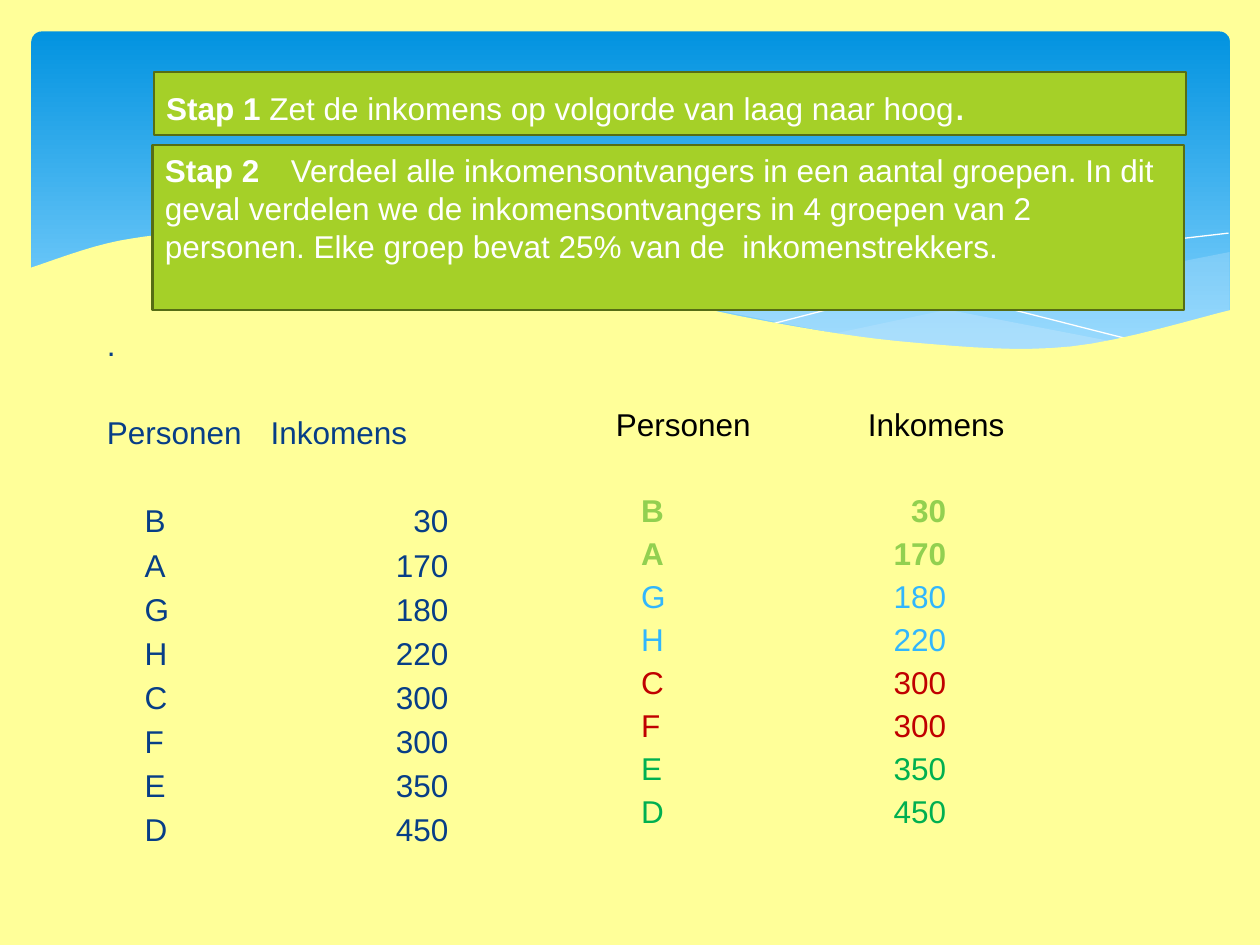
"""Build the slide on ranking incomes and dividing them into groups."""
from lxml import etree
from pptx import Presentation
from pptx.dml.color import RGBColor
from pptx.enum.shapes import MSO_SHAPE
from pptx.enum.text import MSO_ANCHOR, PP_ALIGN
from pptx.oxml.ns import qn
from pptx.util import Inches, Pt

RECT, ROUND = MSO_SHAPE.RECTANGLE, MSO_SHAPE.ROUNDED_RECTANGLE
TOP, MIDDLE = MSO_ANCHOR.TOP, MSO_ANCHOR.MIDDLE
LEFT = PP_ALIGN.LEFT
CREAM, WHITE, NAVY, PALE = "FFFF99", "FFFFFF", "073E87", "C6E7FC"
LIGHT, BLUE, RED, GREEN = "92D050", "31B6FD", "C00000", "00B050"


def color(code):
    return RGBColor.from_string(code)


def bend(knots, steps=8):
    """Return points on a smooth curve through the knots."""
    ends = [knots[0]] + knots + [knots[-1]]
    points = [knots[0]]
    for a, b, c, d in zip(ends, ends[1:], ends[2:], ends[3:]):
        for t in (n / steps for n in range(1, steps + 1)):
            points.append(tuple(
                q + t * (r - p) / 2 + t * t * (p - 2.5 * q + 2 * r - s / 2)
                + t ** 3 * (1.5 * (q - r) + (s - p) / 2)
                for p, q, r, s in zip(a, b, c, d)))
    return points


prs = Presentation()
prs.slide_width, prs.slide_height = Inches(10), Inches(7.5)
slide = prs.slides.add_slide(prs.slide_layouts[6])
shapes = slide.shapes
slide.background.fill.solid()
slide.background.fill.fore_color.rgb = color(CREAM)

sky = shapes.add_shape(ROUND, Inches(0.25), Inches(0.25), Inches(9.51), Inches(2.7))
sky.adjustments[0] = 0.03
sky.shadow.inherit = False
sky.line.fill.background()
sky.fill.gradient()
sky.fill.gradient_angle = 270
for stop, pos, code in zip(sky.fill.gradient_stops, (0, 0.9), ("0293E0", "83D3FE")):
    stop.position = pos
    stop.color.rgb = color(code)

crest = bend([(9.76, 2), (8.61, 2.23), (6.61, 2.65)])
trough = bend([(6.61, 2.65), (7.45, 2.75), (8.35, 2.77), (9.13, 2.67), (9.76, 2.47)])
swell = bend([(2.86, 1.91), (3.61, 1.85), (4.89, 1.94), (6.29, 2.22), (8.93, 2.73)])
under = bend([(8.93, 2.73), (8.07, 2.78), (6.95, 2.7), (4.49, 2.22), (2.86, 1.91)])
long = bend([(3.09, 1.95), (4.01, 1.87), (5.1, 1.92), (6.65, 2.13), (9.07, 2.72)])
short = bend([(6.13, 2.57), (7.48, 2.23), (8.66, 1.99), (9.75, 1.85)])
shore = bend([(0.23, 2.13), (0.95, 1.91), (1.77, 1.84), (2.92, 1.9), (4.47, 2.2),
              (6.03, 2.54), (7.26, 2.72), (8.5, 2.75), (9.77, 2.46)])
waves = [
    (PALE, 29, crest + trough),
    (PALE, 40, swell + under),
    (None, 100, long),
    (None, 100, short),
    (CREAM, 100, shore + [(9.77, 3.29), (0.23, 3.29)]),
]
for code, alpha, points in waves:
    points = [(Inches(x), Inches(y)) for x, y in points]
    path = shapes.build_freeform(*points[0])
    path.add_line_segments(points[1:], close=code is not None)
    wave = path.convert_to_shape()
    wave.shadow.inherit = False
    if code is None:
        wave.fill.background()
        wave.line.color.rgb = color(WHITE)
        wave.line.width = Pt(0)
        continue
    wave.line.fill.background()
    wave.fill.solid()
    wave.fill.fore_color.rgb = color(code)
    if alpha < 100:
        tint = wave._element.spPr.find(".//" + qn("a:srgbClr"))
        etree.SubElement(tint, qn("a:alpha"), val=str(alpha * 1000))

steps = [
    (1.22, 0.57, 0.5, MIDDLE, [
        ("Stap 1 ", 18, True),
        ("Zet de inkomens op volgorde van laag naar hoog", 18, False),
        (".", 24, False)]),
    (1.21, 1.15, 1.31, TOP, [
        ("Stap 2 ", 18, True),
        ("\tVerdeel alle inkomensontvangers in een aantal groepen. In dit geval "
         "verdelen we de inkomensontvangers in 4 groepen van 2 personen. "
         "Elke groep bevat 25% van de  inkomenstrekkers.", 18, False)]),
]
for left, top, high, anchor, runs in steps:
    step = shapes.add_shape(RECT, Inches(left), Inches(top), Inches(8.19), Inches(high))
    step.shadow.inherit = False
    step.fill.solid()
    step.fill.fore_color.rgb = color("A5D028")
    step.line.color.rgb = color("566D15")
    step.line.width = Pt(1.25)
    frame = step.text_frame
    frame.word_wrap = True
    frame.vertical_anchor = anchor
    para = frame.paragraphs[0]
    para.alignment = LEFT
    para.font.name = "Arial"
    para.font.color.rgb = color(WHITE)
    for text, size, bold in runs:
        run = para.add_run()
        run.text = text
        run.font.size = Pt(size)
        run.font.bold = bold

people = [("B", 30), ("A", 170), ("G", 180), ("H", 220),
          ("C", 300), ("F", 300), ("E", 350), ("D", 450)]
groups = [LIGHT, BLUE, RED, GREEN]
rows = [f"\t{name}\t{pay}" for name, pay in people]
head = "Personen\tInkomens"
ranked = [(text, NAVY) for text in [".", head] + rows]
parted = [(head, "000000")] + [(text, groups[i // 2]) for i, text in enumerate(rows)]

lists = [
    ((0.75, 2.18, 4.17, 4.91), 0.4, 1.3, 0.3, 2.71, 1, 3.6, 28.8, ranked),
    ((4.79, 3.12, 3.7, 3.86), 0.05, 2, 0.2, 2.62, 1.14, 0, 24.6, parted),
]
for box, inset, mid, near, far, pitch, gap, wide, lines in lists:
    frame = shapes.add_textbox(*map(Inches, box)).text_frame
    frame.word_wrap = True
    frame.margin_top = Inches(inset)
    for i, (text, code) in enumerate(lines):
        para = frame.paragraphs[0] if i == 0 else frame.add_paragraph()
        para.line_spacing = pitch
        first = text in (head, rows[0])
        para.space_before = Pt(0 if i == 0 else wide if first else gap)
        tabs = etree.SubElement(para._p.get_or_add_pPr(), qn("a:tabLst"))
        stops = [(mid, "l")] if text == head else [(near, "l"), (far, "r")]
        for pos, side in stops:
            etree.SubElement(tabs, qn("a:tab"), pos=str(Inches(pos)), algn=side)
        para.add_run().text = text
        para.font.name = "Arial"
        para.font.size = Pt(18)
        para.font.bold = code == LIGHT
        para.font.color.rgb = color(code)

prs.save("out.pptx")
